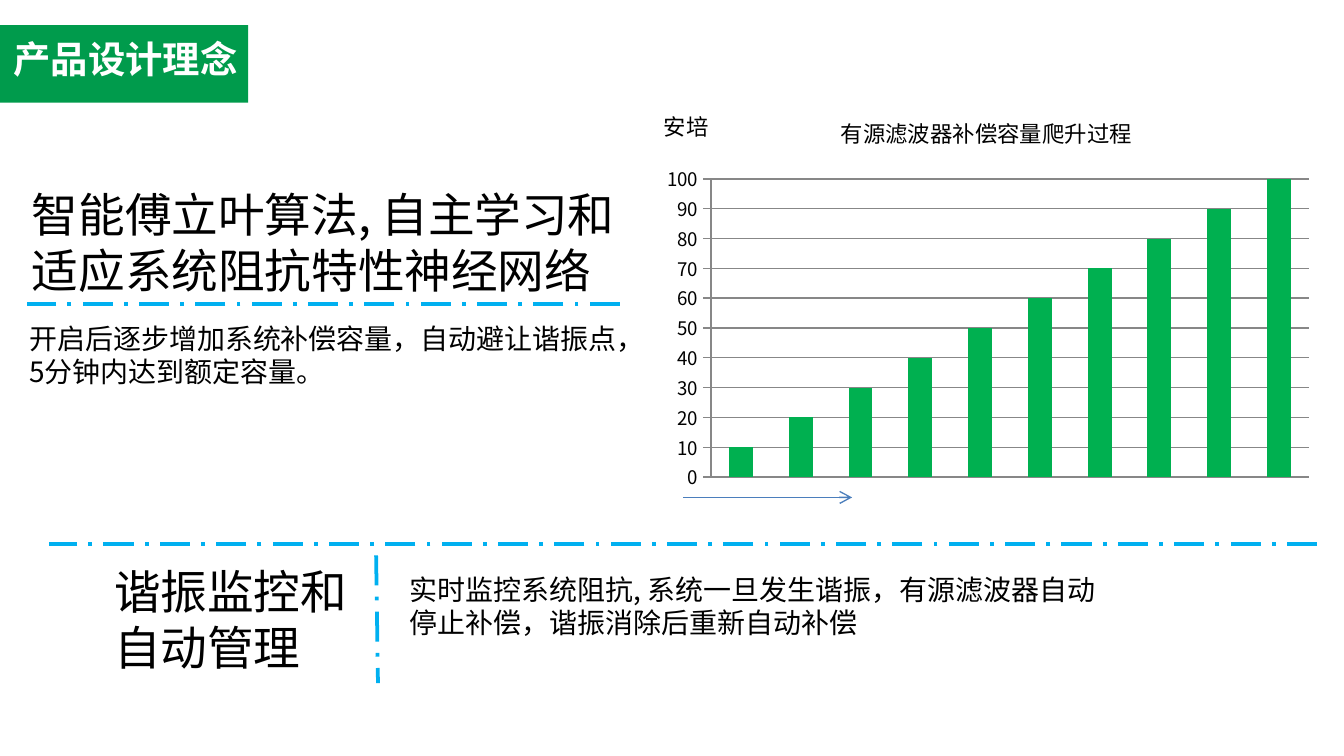
from lxml.etree import SubElement
from pptx import Presentation
from pptx.chart.data import CategoryChartData
from pptx.dml.color import RGBColor
from pptx.enum.chart import XL_CHART_TYPE, XL_TICK_MARK
from pptx.enum.dml import MSO_LINE
from pptx.enum.shapes import MSO_CONNECTOR, MSO_SHAPE
from pptx.enum.text import MSO_ANCHOR, MSO_AUTO_SIZE, PP_ALIGN
from pptx.oxml import parse_xml
from pptx.oxml.ns import nsdecls, qn
from pptx.util import Pt

FONT = "Noto Sans CJK SC"
GREEN = RGBColor(0x00, 0x9B, 0x4C)
BAR = RGBColor(0x00, 0xB0, 0x50)
CYAN = RGBColor(0x00, 0xB0, 0xF0)
BLUE = RGBColor(0x4B, 0x7E, 0xBC)
GRAY = RGBColor(0x87, 0x87, 0x87)
BLACK = RGBColor(0, 0, 0)
WHITE = RGBColor(255, 255, 255)

deck = Presentation()
deck.slide_width, deck.slide_height = Pt(720), Pt(405)
slide = deck.slides.add_slide(deck.slide_layouts[5])
shapes = slide.shapes


def write(text, box, size=15, color=BLACK, bold=False, shape=None):
    shape = shape or shapes.add_textbox(0, 0, 0, 0)
    shape.left, shape.top, shape.width, shape.height = map(Pt, box)
    frame = shape.text_frame
    frame.word_wrap = True
    frame.auto_size = MSO_AUTO_SIZE.NONE
    frame.vertical_anchor = MSO_ANCHOR.TOP
    frame.text = text
    for para in frame.paragraphs:
        para.alignment = PP_ALIGN.LEFT
        for run in para.runs:
            font = run.font
            font.size, font.bold, font.name = Pt(size), bold, FONT
            font.color.rgb = color
            SubElement(run._r.get_or_add_rPr(), qn("a:ea"), typeface=FONT)


def rule(ends, color=CYAN, width=2, dash=MSO_LINE.LONG_DASH_DOT):
    line = shapes.add_connector(MSO_CONNECTOR.STRAIGHT, *map(Pt, ends))
    line.line.color.rgb = color
    line.line.width = Pt(width)
    line.line.dash_style = dash
    SubElement(line._element.spPr, qn("a:effectLst"))
    return line


band = shapes.add_shape(MSO_SHAPE.RECTANGLE, Pt(-1.5), Pt(13.5), Pt(134.5), Pt(41.5))
band.shadow.inherit = False
band.fill.solid()
band.fill.fore_color.rgb = GREEN
band.line.fill.background()
shapes.title._element.addprevious(band._element)

write("产品设计理念", (0, 16, 276, 31.5), size=20, color=WHITE, bold=True, shape=shapes.title)
write("谐振监控和\n自动管理", (54, 298, 220, 67.5), size=25)
write("智能傅立叶算法, 自主学习和适应系统阻抗特性神经网络", (10, 96, 350, 67.5), size=25)
write("开启后逐步增加系统补偿容量，自动避让谐振点，5分钟内达到额定容量。", (8.5, 168.5, 345.5, 44))
rule((332, 163, 14.5, 163))
rule((201.5, 297.5, 202.5, 366))
write("实时监控系统阻抗, 系统一旦发生谐振，有源滤波器自动停止补偿，谐振消除后重新自动补偿", (212.5, 303, 391, 44))
rule((705.5, 291.5, 26, 291.5))

data = CategoryChartData()
data.categories = [str(n) for n in range(1, 11)]
data.add_series("Series 1", range(10, 101, 10))
chart = shapes.add_chart(
    XL_CHART_TYPE.COLUMN_CLUSTERED, Pt(348.5), Pt(50.5), Pt(360), Pt(216), data
).chart
chart.has_legend = False
chart.font.name, chart.font.size = FONT, Pt(10)
chart.font.color.rgb = BLACK
chart.has_title = True
chart.chart_title.include_in_layout = False
head = chart.chart_title.text_frame
head.text = "有源滤波器补偿容量爬升过程"
font = head.paragraphs[0].runs[0].font
font.size, font.bold, font.name = Pt(12), False, FONT
font.color.rgb = BLACK

plot = chart.plots[0]
plot.gap_width = 150
plot.vary_by_categories = False
bars = plot.series[0].format.fill
bars.solid()
bars.fore_color.rgb = BAR
chart.category_axis.visible = False
axis = chart.value_axis
axis.minimum_scale, axis.maximum_scale, axis.major_unit = 0, 100, 10
axis.major_tick_mark = XL_TICK_MARK.OUTSIDE
axis.has_major_gridlines = True
for line in (axis.format.line, axis.major_gridlines.format.line):
    line.color.rgb = GRAY
    line.width = Pt(0.75)

area = chart._chartSpace.chart.plotArea
for old in area.findall(qn("c:layout")):
    area.remove(old)
area.insert(0, parse_xml(
    f'<c:layout {nsdecls("c")}><c:manualLayout><c:layoutTarget val="inner"/>'
    '<c:xMode val="edge"/><c:yMode val="edge"/><c:x val="0.09"/><c:y val="0.21"/>'
    '<c:w val="0.89"/><c:h val="0.74"/></c:manualLayout></c:layout>'
))

arrow = rule((366, 266.5, 456.5, 266.5), color=BLUE, width=0.75, dash=MSO_LINE.SOLID)
SubElement(arrow.line._get_or_add_ln(), qn("a:tailEnd"), type="arrow")
write("安培", (348.5, 57, 187, 21.5), size=12)

deck.save("out.pptx")
